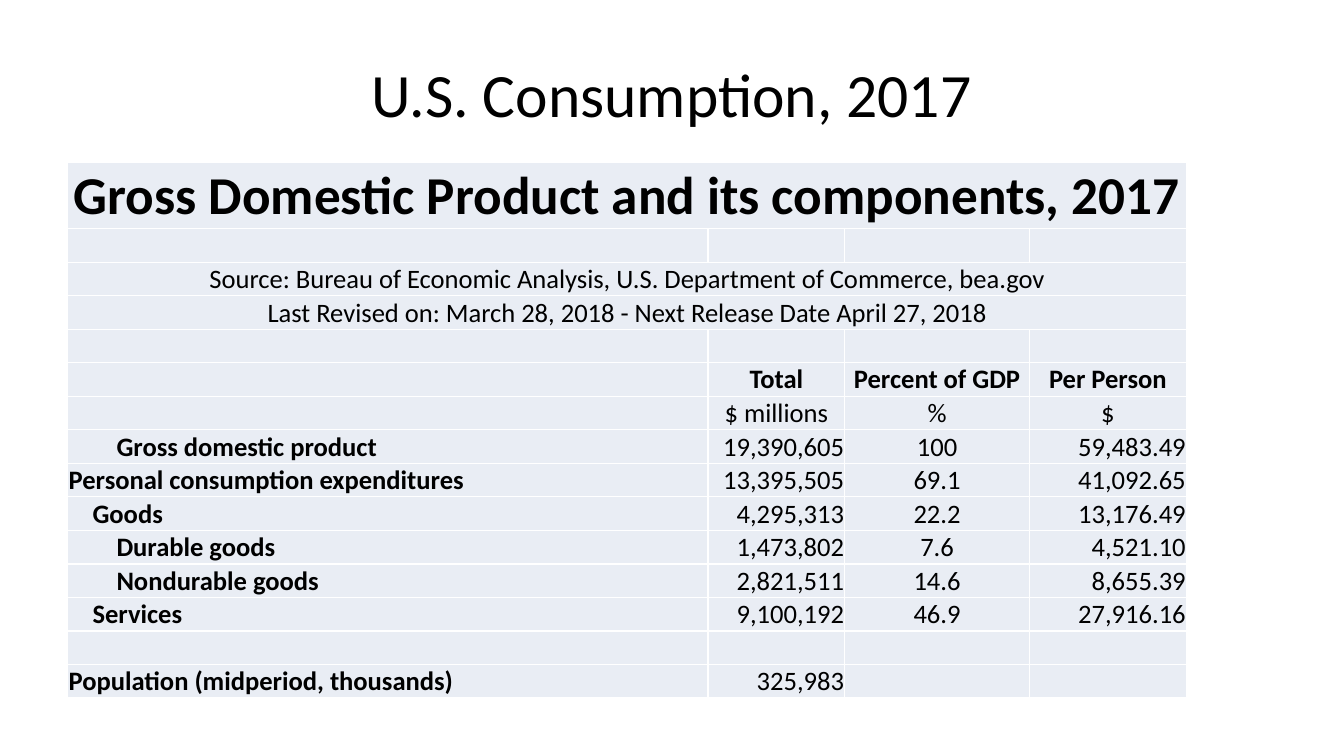
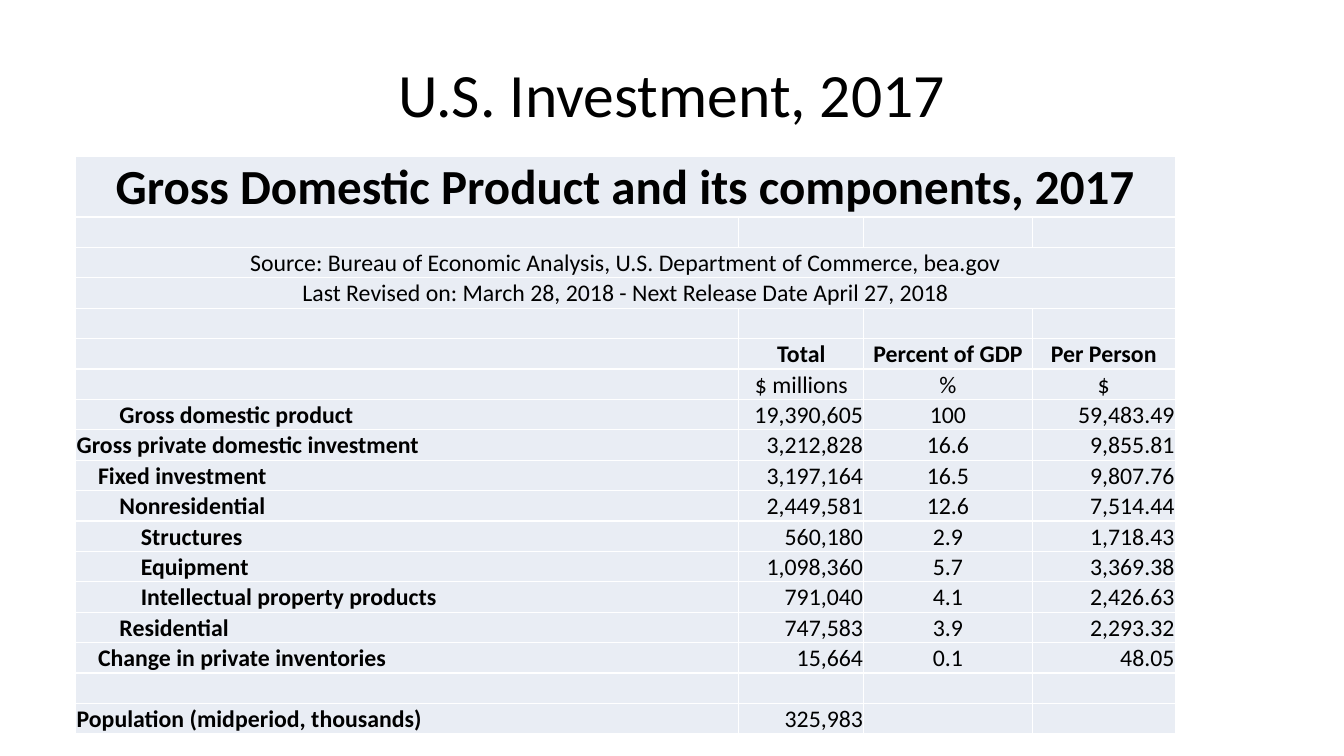
from dataclasses import dataclass

from pptx import Presentation
from pptx.dml.color import RGBColor
from pptx.enum.text import MSO_ANCHOR as Anchor, PP_ALIGN as Align
from pptx.util import Cm, Pt

FONT = "Calibri"
BLACK = RGBColor(0x00, 0x00, 0x00)
PALE_BLUE = RGBColor(0xE9, 0xED, 0xF4)
TITLE_SIZE = 44
INDENT_EM = 0.9
CELL_MARGIN = Cm(0.02)
BLANK_LAYOUT = 6
VALUE_ALIGNS = (Align.RIGHT, Align.CENTER, Align.RIGHT)

BANNERS = {
    0: "Gross Domestic Product and its components, 2017",
    2: "Source: Bureau of Economic Analysis, U.S. Department of Commerce, bea.gov",
    3: "Last Revised on: March 28, 2018 - Next Release Date April 27, 2018",
}
HEADER_ROW = 5
UNIT_ROW = 6
FIRST_DATA_ROW = 7
HEADERS = ("Total", "Percent of GDP", "Per Person")
UNITS = ("$ millions", "%", "$")
GDP = (2, "Gross domestic product", "19,390,605", "100", "59,483.49")
POPULATION = (0, "Population (midperiod, thousands)", "325,983")

CONSUMPTION = (
    (0, "Personal consumption expenditures", "13,395,505", "69.1", "41,092.65"),
    (1, "Goods", "4,295,313", "22.2", "13,176.49"),
    (2, "Durable goods", "1,473,802", "7.6", "4,521.10"),
    (2, "Nondurable goods", "2,821,511", "14.6", "8,655.39"),
    (1, "Services", "9,100,192", "46.9", "27,916.16"),
)
INVESTMENT = (
    (0, "Gross private domestic investment", "3,212,828", "16.6", "9,855.81"),
    (1, "Fixed investment", "3,197,164", "16.5", "9,807.76"),
    (2, "Nonresidential", "2,449,581", "12.6", "7,514.44"),
    (3, "Structures", "560,180", "2.9", "1,718.43"),
    (3, "Equipment", "1,098,360", "5.7", "3,369.38"),
    (3, "Intellectual property products", "791,040", "4.1", "2,426.63"),
    (2, "Residential", "747,583", "3.9", "2,293.32"),
    (1, "Change in private inventories", "15,664", "0.1", "48.05"),
)


@dataclass
class TableStyle:
    left: float
    top: float
    height: float
    banner_height: float
    columns: tuple
    banner_size: int
    text_size: int


CONSUMPTION_STYLE = TableStyle(1.71, 4.1, 13.49, 1.66, (16.13, 3.45, 4.65, 3.96), 38, 19)
INVESTMENT_STYLE = TableStyle(1.91, 3.95, 14.55, 1.52, (16.71, 3.15, 4.24, 3.61), 35, 17)


def add_text(paragraph, text, size, align=Align.LEFT, bold=False):
    paragraph.alignment = align
    run = paragraph.add_run()
    run.text = text
    run.font.name = FONT
    run.font.size = Pt(size)
    run.font.bold = bold
    run.font.color.rgb = BLACK


def add_title(slide, text):
    frame = slide.shapes.add_textbox(Cm(1.69), Cm(0.76), Cm(30.48), Cm(3.18)).text_frame
    frame.word_wrap = True
    frame.vertical_anchor = Anchor.MIDDLE
    add_text(frame.paragraphs[0], text, TITLE_SIZE, Align.CENTER)


def format_cell(cell, size):
    cell.fill.solid()
    cell.fill.fore_color.rgb = PALE_BLUE
    cell.vertical_anchor = Anchor.BOTTOM
    cell.margin_left = cell.margin_right = cell.margin_top = CELL_MARGIN
    cell.margin_bottom = 0
    end_properties = cell.text_frame.paragraphs[0]._p.get_or_add_endParaRPr()
    end_properties.set("sz", str(size * 100))


def fill_cell(cell, text, size, align, bold=False):
    add_text(cell.text_frame.paragraphs[0], text, size, align, bold)


def fill_label(cell, text, level, size):
    paragraph = cell.text_frame.paragraphs[0]
    add_text(paragraph, text, size, bold=True)
    indent = Pt(level * INDENT_EM * size)
    paragraph._p.get_or_add_pPr().set("marL", str(indent))


def add_grid(slide, style, row_count):
    frame = slide.shapes.add_table(
        row_count, len(style.columns), Cm(style.left), Cm(style.top),
        Cm(sum(style.columns)), Cm(style.height))
    table = frame.table
    table.first_row = False
    table.horz_banding = False
    for column, width in zip(table.columns, style.columns):
        column.width = Cm(width)
    row_height = (style.height - style.banner_height) / (row_count - 1)
    for index, row in enumerate(table.rows):
        row.height = Cm(row_height if index else style.banner_height)
        for cell in row.cells:
            format_cell(cell, style.text_size)
    return table


def add_gdp_table(slide, components, style):
    data_rows = (GDP, *components)
    population_row = FIRST_DATA_ROW + len(data_rows) + 1
    table = add_grid(slide, style, population_row + 1)
    size = style.text_size

    for row, text in BANNERS.items():
        banner = table.cell(row, 0)
        banner.merge(table.cell(row, len(style.columns) - 1))
        is_heading = row == 0
        fill_cell(banner, text, style.banner_size if is_heading else size,
                  Align.CENTER, is_heading)

    for column, (header, unit) in enumerate(zip(HEADERS, UNITS), 1):
        header_cell = table.cell(HEADER_ROW, column)
        header_cell.vertical_anchor = Anchor.TOP
        fill_cell(header_cell, header, size, Align.CENTER, True)
        fill_cell(table.cell(UNIT_ROW, column), unit, size, Align.CENTER)

    numbered_rows = [*enumerate(data_rows, FIRST_DATA_ROW), (population_row, POPULATION)]
    for row, (level, label, *values) in numbered_rows:
        fill_label(table.cell(row, 0), label, level, size)
        for column, (value, align) in enumerate(zip(values, VALUE_ALIGNS), 1):
            fill_cell(table.cell(row, column), value, size, align)


def main():
    presentation = Presentation()
    presentation.slide_width = Cm(33.87)
    presentation.slide_height = Cm(19.05)
    for title, components, style in (
        ("U.S. Consumption, 2017", CONSUMPTION, CONSUMPTION_STYLE),
        ("U.S. Investment, 2017", INVESTMENT, INVESTMENT_STYLE),
    ):
        slide = presentation.slides.add_slide(presentation.slide_layouts[BLANK_LAYOUT])
        add_title(slide, title)
        add_gdp_table(slide, components, style)
    presentation.save("out.pptx")


if __name__ == "__main__":
    main()
